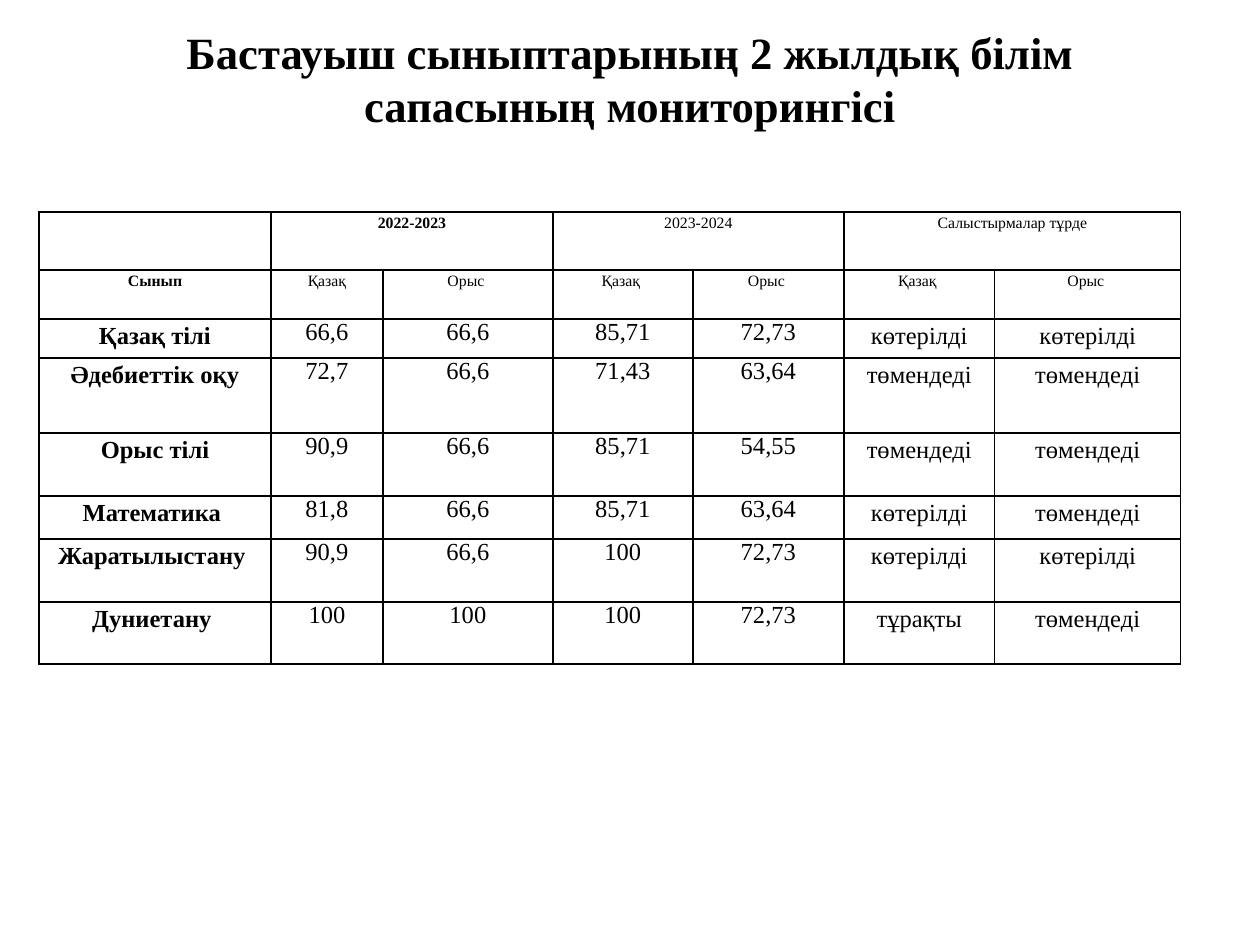
from pptx import Presentation
from pptx import util as u
from pptx.dml.color import RGBColor
from pptx.enum import text
from pptx.oxml import parse_xml
from pptx.oxml.ns import nsdecls

PX = 914400 / 126
THEME = {"font": "Times New Roman", "ink": "000000", "title": 25.5, "head": 9, "body": 14, "border": 1}


def px(length):
    return u.Emu(round(length * PX))


def write(paragraph, words, size, bold):
    paragraph.alignment = text.PP_ALIGN.CENTER
    run = paragraph.add_run()
    run.text = words
    run.font.name = THEME["font"]
    run.font.size = u.Pt(size)
    run.font.bold = bold
    run.font.color.rgb = RGBColor.from_string(THEME["ink"])


deck = Presentation()
deck.slide_width, deck.slide_height = px(1260), px(945)
slide = deck.slides.add_slide(deck.slide_layouts[5])

# Title, held in the upper part of its box
title = slide.shapes.title
title.left, title.top, title.width, title.height = px(63), px(38), px(1134), px(157)
frame = title.text_frame
frame.auto_size = text.MSO_AUTO_SIZE.NONE
frame.word_wrap = True
frame.vertical_anchor = text.MSO_ANCHOR.MIDDLE
frame.margin_top, frame.margin_bottom = 0, px(77)
write(frame.paragraphs[0], "Бастауыш сыныптарының 2 жылдық білім сапасының мониторингісі",
      THEME["title"], True)

# Quality of learning by subject, year and language
years = ["", "2022-2023", "", "2023-2024", "", "Салыстырмалар тұрде", ""]
languages = ["Сынып", "Қазақ", "Орыс ", "Қазақ ", "Орыс ", "Қазақ ", "Орыс "]
subjects = [
    ["Қазақ тілі", "66,6", "66,6", "85,71", "72,73", "көтерілді", "көтерілді"],
    ["Әдебиеттік оқу", "72,7", "66,6", "71,43", "63,64", "төмендеді", "төмендеді"],
    ["Орыс тілі", "90,9", "66,6", "85,71", "54,55", "төмендеді", "төмендеді"],
    ["Математика ", "81,8", "66,6", "85,71", "63,64", "көтерілді", "төмендеді"],
    ["Жаратылыстану ", "90,9", "66,6", "100", "72,73", "көтерілді", "көтерілді"],
    ["Дуниетану ", "100", "100", "100", "72,73", "тұрақты", "төмендеді"],
]
grid = [years, languages] + subjects
col_widths = [232, 112, 170, 140, 151, 151, 186]
row_heights = [58, 49, 39, 75, 63, 43, 63, 62]

results = slide.shapes.add_table(len(grid), len(col_widths), px(39), px(212),
                                 px(sum(col_widths)), px(sum(row_heights))).table
results.first_row = results.horz_banding = False
for column, width in zip(results.columns, col_widths):
    column.width = px(width)
for row, height in zip(results.rows, row_heights):
    row.height = px(height)
for first in (1, 3, 5):
    results.cell(0, first).merge(results.cell(0, first + 1))

for r, line in enumerate(grid):
    for c, words in enumerate(line):
        cell = results.cell(r, c)
        is_head, is_score = r < 2, r >= 2 and 1 <= c <= 4
        has_inset = c == 0 or (r == 1 and c < 3) or (r >= 2 and c > 4)
        cell.margin_left = cell.margin_right = px(4 if has_inset else 0)
        cell.margin_top = cell.margin_bottom = 0

        # Text
        if words:
            paragraph = cell.text_frame.paragraphs[0]
            write(paragraph, words, THEME["head" if is_head else "body"],
                  c == 0 or words == "2022-2023")
            if not is_score:
                paragraph.line_spacing = 1.15
            if is_head or c == 0:
                paragraph.space_after = u.Pt(10)

        # Borders come before the fill in the cell properties
        properties = cell._tc.get_or_add_tcPr()
        for side in ("lnL", "lnR", "lnT", "lnB"):
            properties.append(parse_xml(
                f'<a:{side} {nsdecls("a")} w="{u.Pt(THEME["border"])}"><a:solidFill>'
                f'<a:srgbClr val="{THEME["ink"]}"/></a:solidFill></a:{side}>'))
        cell.fill.background()

deck.save("out.pptx")
